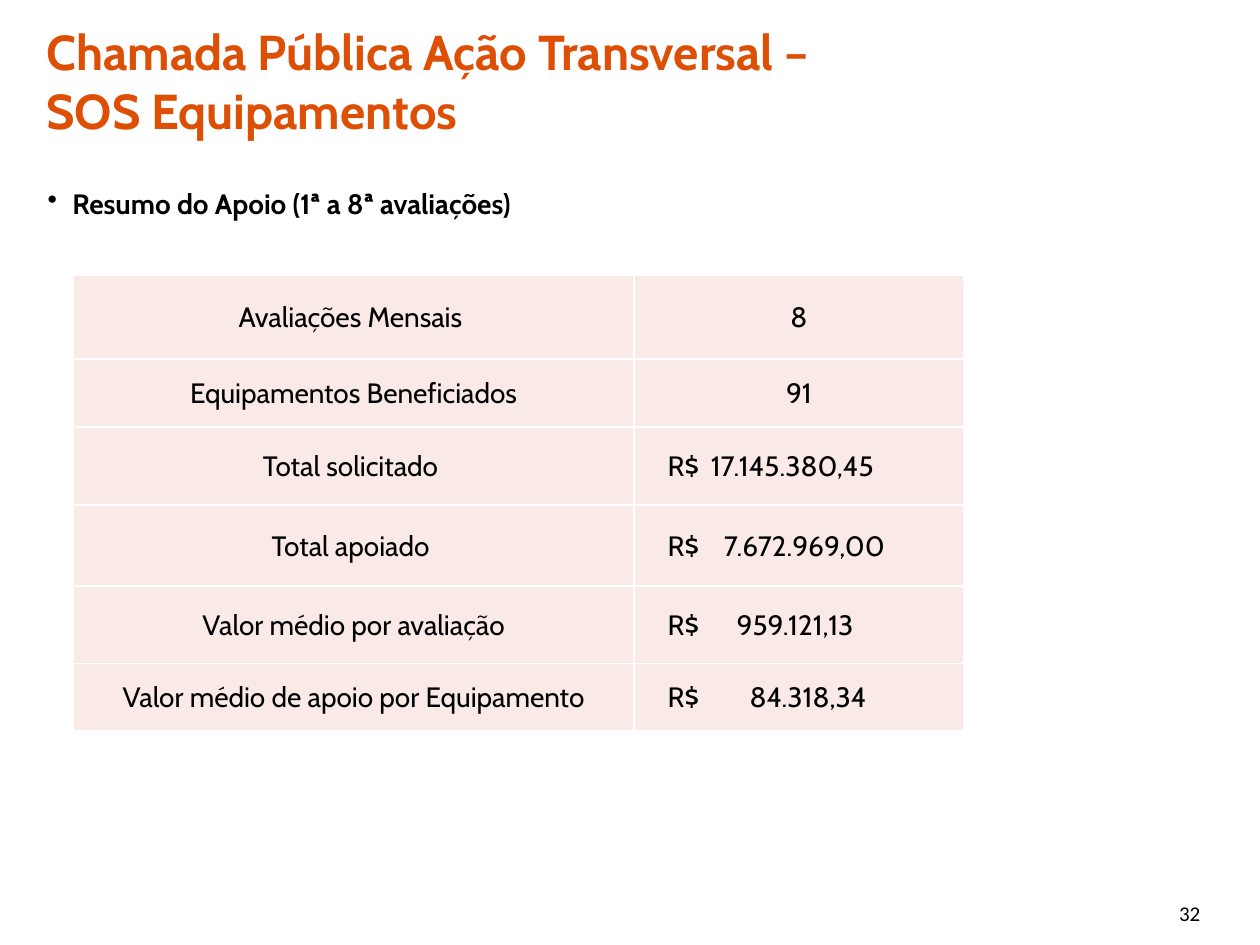
from lxml import etree
from pptx import Presentation
from pptx.dml.color import RGBColor
from pptx.enum.text import MSO_ANCHOR, PP_ALIGN
from pptx.oxml.ns import qn
from pptx.util import Cm, Pt

MIDDLE, TOP = MSO_ANCHOR.MIDDLE, MSO_ANCHOR.TOP
LEFT, CENTER, JUSTIFY = PP_ALIGN.LEFT, PP_ALIGN.CENTER, PP_ALIGN.JUSTIFY

ORANGE, BLACK, WHITE, PINK = "DD4F05", "000000", "FFFFFF", "F9E9E7"
BODY_FONT, NUMBER_FONT = "Cabin", "Calibri"

COLUMN_WIDTHS = [11.3, 6.65]
ROW_HEIGHTS = [1.7, 1.37, 1.57, 1.63, 1.57, 1.35]
COUNTS = [("Avaliações Mensais ", "8"), ("Equipamentos Beneficiados", "91")]
AMOUNTS = [
    ("Total solicitado ", "17.145.380,45"),
    ("Total apoiado ", "7.672.969,00"),
    ("Valor médio por avaliação", "959.121,13"),
    ("Valor médio de apoio por Equipamento", "84.318,34"),
]
CURRENCY_INDENT = 0.68
FIRST_AMOUNT_TAB, AMOUNT_TAB_STEP = 0.87, 0.26


def rgb(value):
    return RGBColor.from_string(value)


def style(paragraph, size, font=BODY_FONT, color=BLACK, bold=False, align=LEFT):
    paragraph.alignment = align
    paragraph.font.size = Pt(size)
    paragraph.font.name = font
    paragraph.font.bold = bold
    paragraph.font.color.rgb = rgb(color)


def add_text(slide, box, text, anchor=TOP):
    """Add a wrapping text box and return its first paragraph."""
    frame = slide.shapes.add_textbox(*map(Cm, box)).text_frame
    frame.word_wrap = True
    frame.vertical_anchor = anchor
    frame.text = text
    return frame.paragraphs[0]


def add_title(slide, box):
    title = add_text(
        slide, box, "Chamada Pública Ação Transversal –\vSOS Equipamentos", MIDDLE)
    style(title, 28, color=ORANGE, bold=True)


def add_summary_heading(slide, box):
    heading = add_text(slide, box, "Resumo do Apoio (1ª a 8ª avaliações)")
    properties = heading._p.get_or_add_pPr()
    properties.set("marL", str(Cm(0.5)))
    properties.set("indent", str(Cm(-0.5)))
    etree.SubElement(properties, qn("a:buChar"), char="•")
    heading.line_spacing = Pt(30)
    style(heading, 16, bold=True, align=JUSTIFY)


def add_page_number(slide, box):
    style(add_text(slide, box, "32"), 12, font=NUMBER_FONT)


def add_borders(cell):
    properties = cell._tc.get_or_add_tcPr()
    for side in ("a:lnL", "a:lnR", "a:lnT", "a:lnB"):
        line = etree.SubElement(properties, qn(side), w=str(Pt(1)))
        fill = etree.SubElement(line, qn("a:solidFill"))
        etree.SubElement(fill, qn("a:srgbClr"), val=WHITE)


def fill_cell(cell, text, align=CENTER, indent=0.03, tab=None):
    add_borders(cell)
    cell.fill.solid()
    cell.fill.fore_color.rgb = rgb(PINK)
    cell.vertical_anchor = MIDDLE
    cell.margin_left = Cm(indent)
    cell.margin_right = cell.margin_top = Cm(0.03)
    cell.margin_bottom = 0
    cell.text = text
    paragraph = cell.text_frame.paragraphs[0]
    if tab is not None:
        stops = etree.SubElement(paragraph._p.get_or_add_pPr(), qn("a:tabLst"))
        etree.SubElement(stops, qn("a:tab"), pos=str(Cm(tab)), algn="l")
    style(paragraph, 16, align=align)


def add_support_table(slide, left, top):
    rows = COUNTS + AMOUNTS
    table = slide.shapes.add_table(
        len(rows), len(COLUMN_WIDTHS), Cm(left), Cm(top),
        Cm(sum(COLUMN_WIDTHS)), Cm(sum(ROW_HEIGHTS))).table
    table.first_row = table.horz_banding = False
    for column, width in zip(table.columns, COLUMN_WIDTHS):
        column.width = Cm(width)
    for row, height in zip(table.rows, ROW_HEIGHTS):
        row.height = Cm(height)
    for index, (label, value) in enumerate(rows):
        fill_cell(table.cell(index, 0), label)
        value_cell = table.cell(index, 1)
        amount_index = index - len(COUNTS)
        if amount_index < 0:
            fill_cell(value_cell, value)
        else:
            fill_cell(value_cell, f"R$\t{value}", LEFT, CURRENCY_INDENT,
                      FIRST_AMOUNT_TAB + amount_index * AMOUNT_TAB_STEP)


def main():
    presentation = Presentation()
    presentation.slide_width, presentation.slide_height = Cm(25.4), Cm(19.05)
    slide = presentation.slides.add_slide(presentation.slide_layouts[6])
    add_page_number(slide, (23.52, 18.03, 1.22, 0.76))
    add_title(slide, (0.69, 0.03, 24.71, 3.2))
    add_summary_heading(slide, (0.71, 3.25, 23.98, 1.52))
    add_support_table(slide, 1.48, 5.54)
    presentation.save("out.pptx")


if __name__ == "__main__":
    main()
